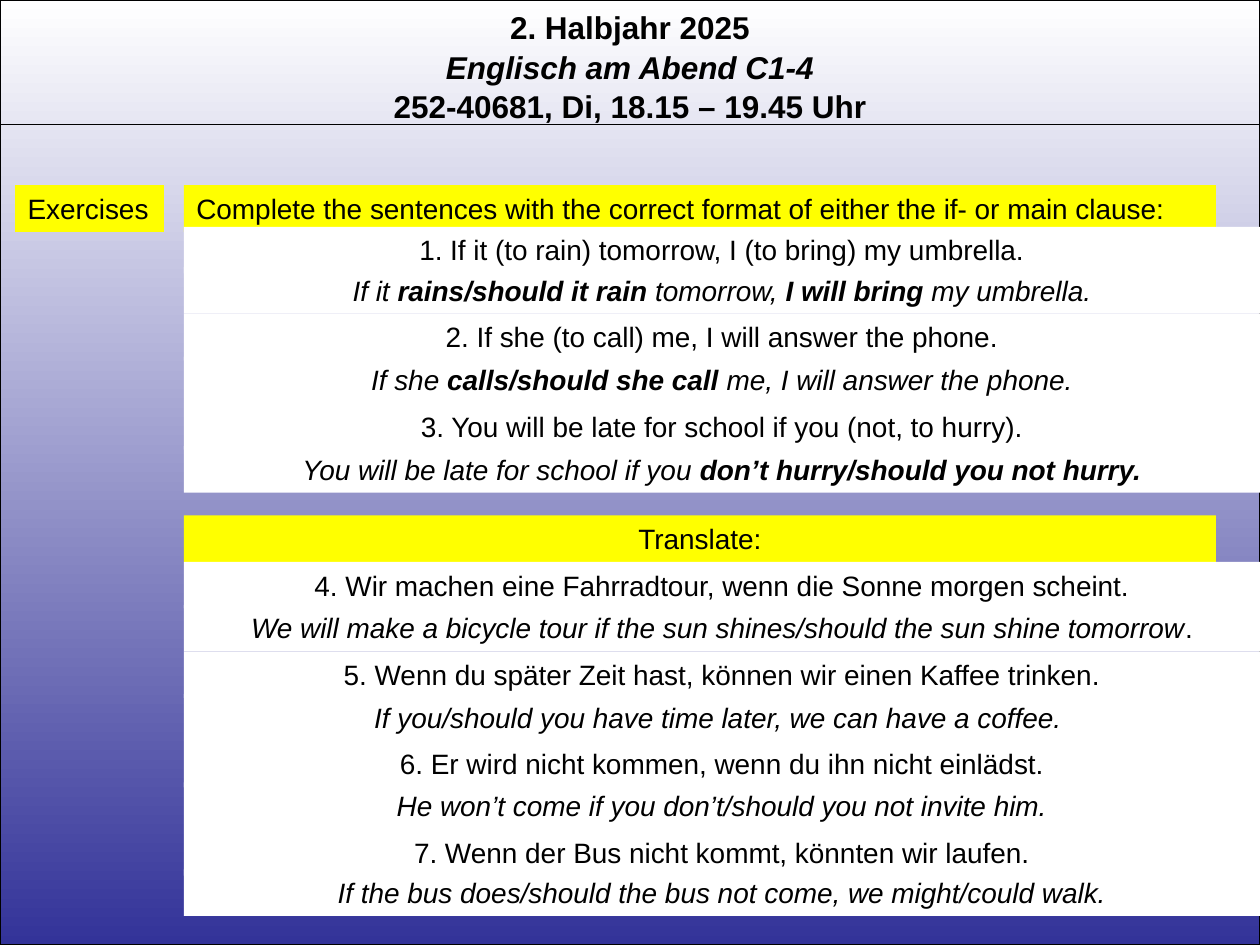
from dataclasses import dataclass

from lxml.etree import SubElement
from pptx import Presentation
from pptx.dml.color import RGBColor
from pptx.enum.shapes import MSO_CONNECTOR, MSO_SHAPE
from pptx.enum.text import MSO_ANCHOR, PP_ALIGN
from pptx.oxml.ns import qn
from pptx.util import Inches, Pt


@dataclass(frozen=True)
class Theme:
    font: str = "Arial"
    ink: RGBColor = RGBColor(0, 0, 0)
    paper: RGBColor = RGBColor(255, 255, 255)
    highlight: RGBColor = RGBColor(255, 255, 0)
    deep_blue: RGBColor = RGBColor(0x33, 0x33, 0x99)
    title_size: Pt = Pt(18)
    body_size: Pt = Pt(16)
    rule_width: Pt = Pt(0.75)


class Worksheet:
    """Draws the parts of an exercise page in one theme."""

    def __init__(self, page, theme):
        self.page = page
        self.theme = theme

    def style(self, span, size, bold=False, italic=False):
        span.font.name = self.theme.font
        span.font.size = size
        span.font.color.rgb = self.theme.ink
        span.font.bold = bold
        span.font.italic = italic

    def rectangle(self, left, top, width, height):
        box = self.page.shapes.add_shape(
            MSO_SHAPE.RECTANGLE, Inches(left), Inches(top), Inches(width), Inches(height))
        box.shadow.inherit = False
        return box

    def backdrop(self, width, height):
        box = self.rectangle(0, 0, width, height)
        box.fill.gradient()
        box.fill.gradient_angle = 270
        for stop, color in zip(box.fill.gradient_stops, (self.theme.paper, self.theme.deep_blue)):
            stop.color.rgb = color
        box.line.color.rgb = self.theme.ink
        box.line.width = self.theme.rule_width

    def title(self, lines, width, height):
        box = self.page.shapes.add_textbox(0, 0, Inches(width), Inches(height))
        box.text_frame.word_wrap = True
        box.text_frame.text = "\n".join(text for text, _ in lines)
        for para, (_, italic) in zip(box.text_frame.paragraphs, lines):
            para.alignment = PP_ALIGN.CENTER
            para.line_spacing = 1.05
            self.style(para.runs[0], self.theme.title_size, bold=True, italic=italic)

    def rule(self, top, width):
        line = self.page.shapes.add_connector(
            MSO_CONNECTOR.STRAIGHT, 0, Inches(top), Inches(width), Inches(top))
        line.line.color.rgb = self.theme.ink
        line.line.width = self.theme.rule_width
        SubElement(line._element.spPr, qn("a:effectLst"))

    def bar(self, left, top, width, spans, color, alignment=PP_ALIGN.CENTER):
        box = self.rectangle(left, top, width, 0.37)
        box.fill.solid()
        box.fill.fore_color.rgb = color
        box.line.fill.background()
        frame = box.text_frame
        frame.word_wrap = True
        frame.vertical_anchor = MSO_ANCHOR.TOP
        para = frame.paragraphs[0]
        para.alignment = alignment
        for text, marks in spans:
            span = para.add_run()
            span.text = text
            self.style(span, self.theme.body_size, "b" in marks, "i" in marks)

    def heading(self, left, top, width, text, alignment=PP_ALIGN.LEFT):
        self.bar(left, top, width, [(text, "")], self.theme.highlight, alignment)

    def exercise(self, question_top, answer_top, question, answer):
        for top, spans in ((question_top, [(question, "")]), (answer_top, answer)):
            self.bar(COLUMN_LEFT, top, PAGE_WIDTH - COLUMN_LEFT, spans, self.theme.paper)


PAGE_WIDTH, PAGE_HEIGHT = 10, 7.5
COLUMN_LEFT, HEADING_WIDTH = 1.46, 8.19

TITLE = [
    ("2. Halbjahr 2025", False),
    ("Englisch am Abend C1-4", True),
    ("252-40681, Di, 18.15 – 19.45 Uhr", False),
]

EXERCISES = [
    (1.8, 2.12, "1. If it (to rain) tomorrow, I (to bring) my umbrella.",
     [("If it ", "i"), ("rains/should it rain ", "bi"), ("tomorrow, ", "i"),
      ("I will bring ", "bi"), ("my umbrella.", "i")]),
    (2.49, 2.83, "2. If she (to call) me, I will answer the phone.",
     [("If she ", "i"), ("calls/should she call ", "bi"), ("me, I will answer the phone.", "i")]),
    (3.2, 3.54, "3. You will be late for school if you (not, to hurry).",
     [("You will be late for school if you ", "i"), ("don’t hurry/should you not hurry.", "bi")]),
    (4.46, 4.8, "4. Wir machen eine Fahrradtour, wenn die Sonne morgen scheint.",
     [("We will make a bicycle tour if the sun shines/should the sun shine tomorrow", "i"),
      (".", "")]),
    (5.17, 5.51, "5. Wenn du später Zeit hast, können wir einen Kaffee trinken.",
     [("If you/should you have time later, we can have a coffee. ", "i")]),
    (5.88, 6.21, "6. Er wird nicht kommen, wenn du ihn nicht einlädst.",
     [("He won’t come if you don’t/should you not invite him.", "i")]),
    (6.58, 6.9, "7. Wenn der Bus nicht kommt, könnten wir laufen.",
     [("If the bus does/should the bus not come, we might/could walk.", "i")]),
]


def main():
    deck = Presentation()
    deck.slide_width, deck.slide_height = Inches(PAGE_WIDTH), Inches(PAGE_HEIGHT)
    sheet = Worksheet(deck.slides.add_slide(deck.slide_layouts[6]), Theme())
    sheet.backdrop(PAGE_WIDTH, PAGE_HEIGHT)
    sheet.title(TITLE, PAGE_WIDTH, 1.01)
    sheet.rule(0.99, PAGE_WIDTH)
    sheet.heading(0.12, 1.47, 1.18, "Exercises")
    sheet.heading(
        COLUMN_LEFT, 1.47, HEADING_WIDTH,
        "Complete the sentences with the correct format of either the if- or main clause:")
    sheet.heading(COLUMN_LEFT, 4.09, HEADING_WIDTH, "Translate:", PP_ALIGN.CENTER)
    for exercise in EXERCISES:
        sheet.exercise(*exercise)
    deck.save("out.pptx")


if __name__ == "__main__":
    main()
